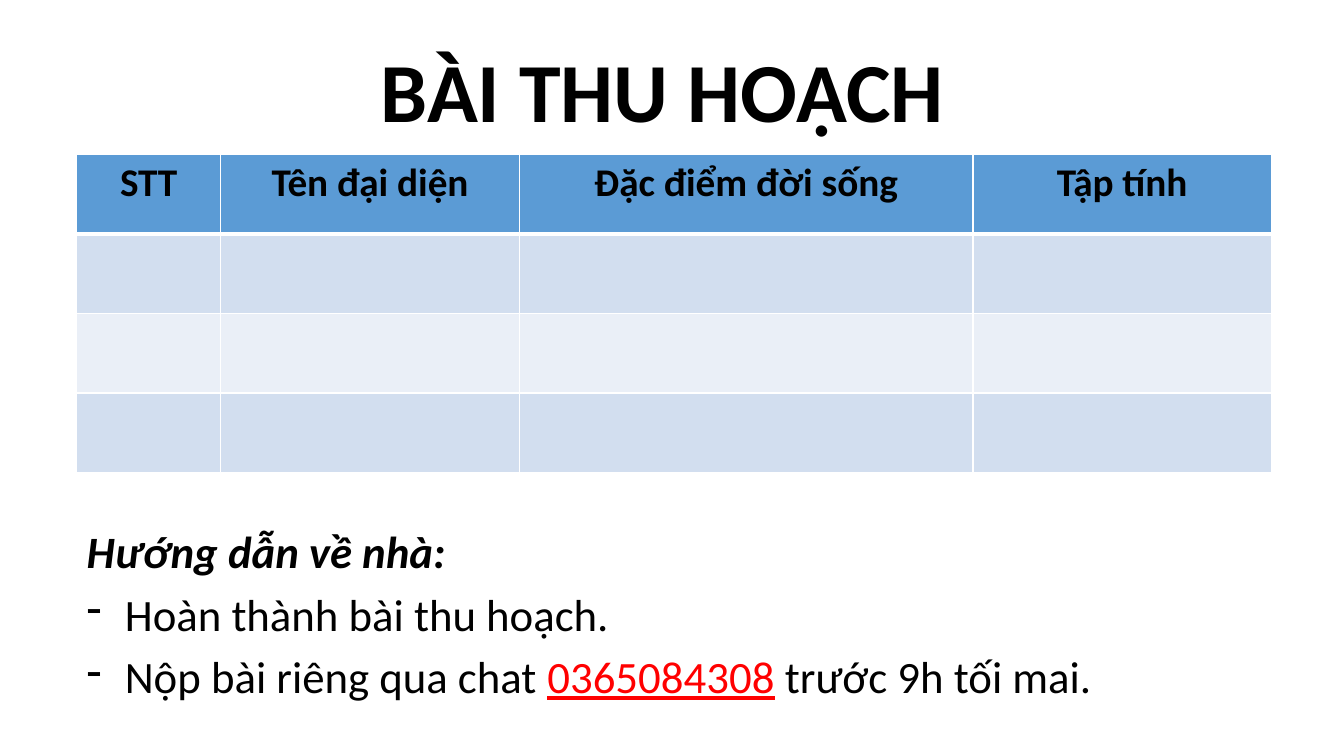
from lxml.etree import SubElement
from pptx import Presentation
from pptx.dml.color import RGBColor
from pptx.enum.text import MSO_ANCHOR, PP_ALIGN
from pptx.oxml.ns import qn
from pptx.util import Inches, Pt

FONT = "Calibri"
COLORS = {
    "text": "000000",
    "phone": "FF0000",
    "header": "5B9BD5",
    "band_dark": "D2DEEF",
    "band_light": "EAEFF7",
    "border": "FFFFFF",
}
LEFT, WIDTH = 0.76, 11.85
ROW_HEIGHT, ROW_COUNT = 0.79, 4
COLUMNS = {
    "STT": 1.43,
    "Tên đại diện": 2.96,
    "Đặc điểm đời sống": 4.5,
    "Tập tính": 2.96,
}


def color(name):
    return RGBColor.from_string(COLORS[name])


def add_text(para, text, size, tone="text", bold=False, italic=False, underline=False):
    span = para.add_run()
    span.text = text
    font = span.font
    font.name, font.size = FONT, Pt(size)
    font.bold, font.italic, font.underline = bold, italic, underline
    font.color.rgb = color(tone)


def add_box(page, left, top, width, height, anchor=MSO_ANCHOR.TOP):
    box = page.shapes.add_textbox(*map(Inches, (left, top, width, height)))
    frame = box.text_frame
    frame.word_wrap = True
    frame.vertical_anchor = anchor
    return frame


def set_dash(para, indent=0.38):
    props = para._p.get_or_add_pPr()
    props.set("marL", str(Inches(indent)))
    props.set("indent", str(-Inches(indent)))
    SubElement(props, qn("a:buFontTx"))
    SubElement(props, qn("a:buChar"), char="-")


def set_borders(cell, **widths):
    props = cell._tc.get_or_add_tcPr()
    # Border lines come before the fill in the cell properties
    for index, (side, width) in enumerate(widths.items()):
        line = SubElement(props, qn(f"a:{side}"), w=str(Pt(width)))
        fill = SubElement(line, qn("a:solidFill"))
        SubElement(fill, qn("a:srgbClr"), val=COLORS["border"])
        props.insert(index, line)


def add_report_table(page, top):
    table = page.shapes.add_table(
        ROW_COUNT, len(COLUMNS), Inches(LEFT), Inches(top),
        Inches(WIDTH), Inches(ROW_HEIGHT * ROW_COUNT),
    ).table
    for column, width in zip(table.columns, COLUMNS.values()):
        column.width = Inches(width)
    for number, row in enumerate(table.rows):
        row.height = Inches(ROW_HEIGHT)
        band = "band_dark" if number % 2 else "band_light"
        for cell, heading in zip(row.cells, COLUMNS):
            cell.fill.solid()
            cell.fill.fore_color.rgb = color(band if number else "header")
            set_borders(cell, lnL=1, lnR=1, lnT=3 if number == 1 else 1,
                        lnB=1 if number else 3)
            if number == 0:
                para = cell.text_frame.paragraphs[0]
                para.alignment = PP_ALIGN.CENTER
                add_text(para, heading, 28, bold=True)


def add_homework(page, top, height):
    frame = add_box(page, LEFT, top, WIDTH, height)
    heading = frame.paragraphs[0]
    tasks = [frame.add_paragraph() for _ in range(2)]
    for para in (heading, *tasks):
        para.line_spacing = 0.9
        para.space_before = Pt(10)
    for para in tasks:
        set_dash(para)
    add_text(heading, "Hướng dẫn về nhà:", 32, bold=True, italic=True)
    add_text(tasks[0], "Hoàn thành bài thu hoạch.", 32)
    add_text(tasks[1], "Nộp bài riêng qua chat ", 32)
    add_text(tasks[1], "0365084308", 32, tone="phone", underline=True)
    add_text(tasks[1], " trước 9h tối mai.", 32)


def main():
    deck = Presentation()
    deck.slide_width, deck.slide_height = Inches(13.33), Inches(7.5)
    page = deck.slides.add_slide(deck.slide_layouts[6])

    # Title
    title = add_box(page, 1.57, 0.27, 10, 1.17, MSO_ANCHOR.BOTTOM).paragraphs[0]
    title.alignment = PP_ALIGN.CENTER
    title.line_spacing = 0.9
    add_text(title, "BÀI THU HOẠCH", 60, bold=True)

    # Report table and homework below it
    add_report_table(page, top=1.53)
    add_homework(page, top=5.21, height=1.81)

    deck.save("out.pptx")


if __name__ == "__main__":
    main()
